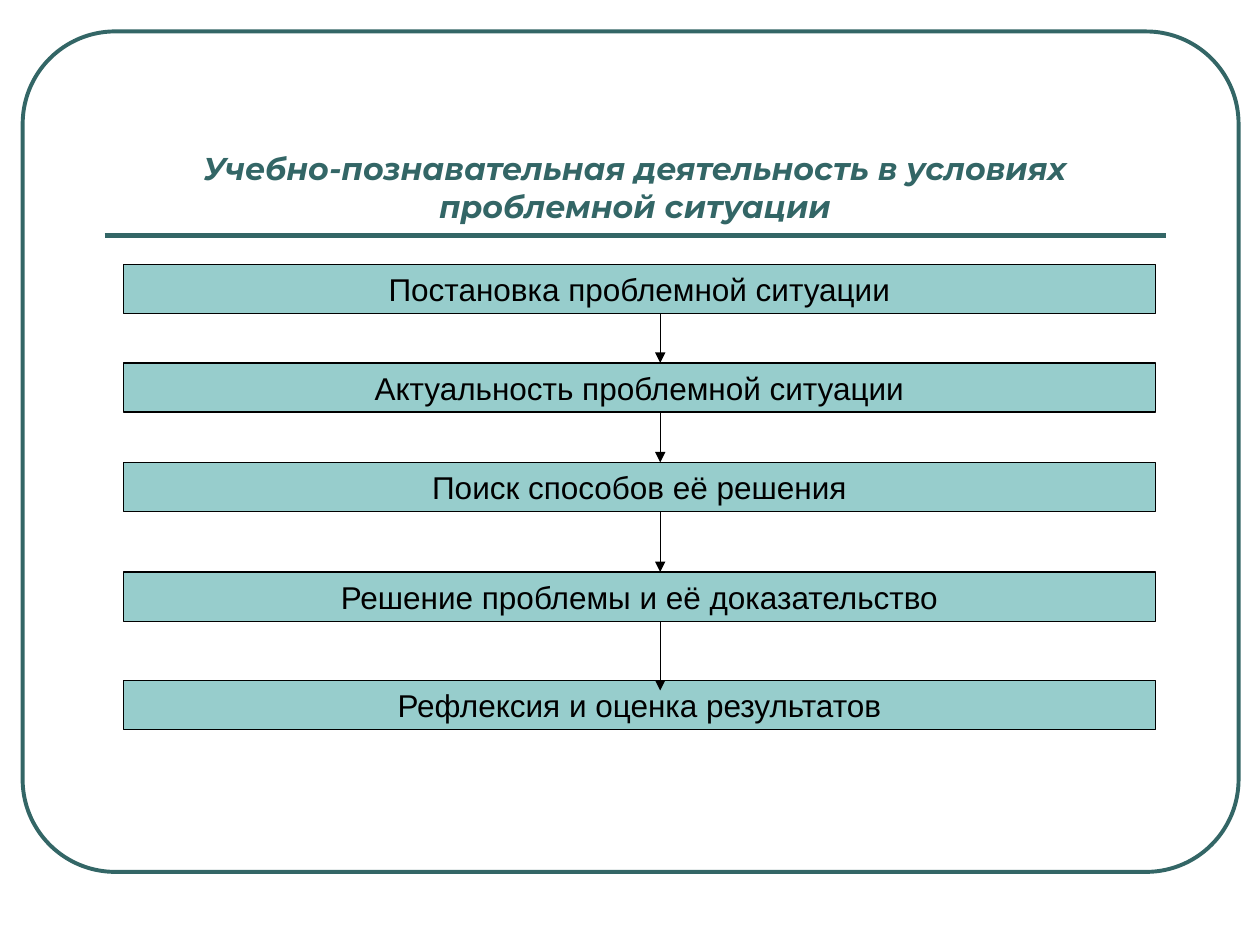
import dataclasses

import lxml.etree
import pptx
import pptx.dml.color
import pptx.enum.shapes
import pptx.enum.text
import pptx.oxml.ns
import pptx.util

Inches = pptx.util.Inches
Pt = pptx.util.Pt
RGB = pptx.dml.color.RGBColor.from_string
Kind = pptx.enum.shapes.MSO_SHAPE
Anchor = pptx.enum.text.MSO_ANCHOR


@dataclasses.dataclass
class Theme:
    frame: str = "336666"
    box: str = "97CDCC"
    ink: str = "000000"
    head: str = "Montserrat"
    body: str = "Arial"
    size: int = 18


theme = Theme()
deck = pptx.Presentation()
deck.slide_width, deck.slide_height = Inches(10), Inches(7.5)
slide = deck.slides.add_slide(deck.slide_layouts[6])
shapes = slide.shapes


def add_line(x1, y1, x2, y2, color, width, arrow=False):
    line = shapes.add_connector(
        pptx.enum.shapes.MSO_CONNECTOR.STRAIGHT,
        Inches(x1), Inches(y1), Inches(x2), Inches(y2))
    line.line.color.rgb = RGB(color)
    line.line.width = Pt(width)
    props = line._element.spPr
    lxml.etree.SubElement(props, pptx.oxml.ns.qn("a:effectLst"))
    if arrow:
        stroke = line.line._get_or_add_ln()
        tail = lxml.etree.SubElement(stroke, pptx.oxml.ns.qn("a:tailEnd"))
        tail.set("type", "triangle")


def set_text(shape, text, font, color, strong=False):
    frame = shape.text_frame
    frame.text = text
    par = frame.paragraphs[0]
    par.alignment = pptx.enum.text.PP_ALIGN.CENTER
    face = par.runs[0].font
    face.name, face.size = font, Pt(theme.size)
    face.color.rgb = RGB(color)
    face.bold = face.italic = strong


# Rounded frame and the rule under the title
frame = shapes.add_shape(Kind.ROUNDED_RECTANGLE, Inches(0.18), Inches(0.25),
                         Inches(9.65), Inches(6.67))
frame.adjustments[0] = 0.11
frame.shadow.inherit = False
frame.fill.background()
frame.line.color.rgb = RGB(theme.frame)
frame.line.width = Pt(2.25)
add_line(0.83, 1.87, 9.25, 1.87, theme.frame, 3)

# Title
title = shapes.add_textbox(Inches(0.83), Inches(0.58), Inches(8.42), Inches(1.25))
title.text_frame.word_wrap = True
title.text_frame.vertical_anchor = Anchor.BOTTOM
set_text(title, "Учебно-познавательная деятельность в условиях проблемной ситуации",
         theme.head, theme.frame, strong=True)

# Stages from top to bottom
stages = [
    (2.1, "Постановка проблемной ситуации"),
    (2.88, "Актуальность проблемной ситуации"),
    (3.67, "Поиск способов её решения"),
    (4.54, "Решение проблемы и её доказательство"),
    (5.4, "Рефлексия и оценка результатов"),
]
tall = 0.39
for top, text in stages:
    box = shapes.add_shape(Kind.RECTANGLE, Inches(0.98), Inches(top),
                           Inches(8.19), Inches(tall))
    box.shadow.inherit = False
    box.fill.solid()
    box.fill.fore_color.rgb = RGB(theme.box)
    box.line.color.rgb = RGB(theme.ink)
    box.line.width = Pt(0.75)
    box.text_frame.word_wrap = False
    box.text_frame.vertical_anchor = Anchor.MIDDLE
    set_text(box, text, theme.body, theme.ink)

# Arrows between stages; the last runs into its box, one has no length
tops = [top for top, text in stages]
spans = [(top + tall, end) for top, end in zip(tops, tops[1:])]
spans[-1] = (spans[-1][0], 5.48)
spans.insert(1, (3.44, 3.44))
for start, end in spans:
    add_line(5.24, start, 5.24, end, theme.ink, 0.75, arrow=True)

deck.save("out.pptx")
